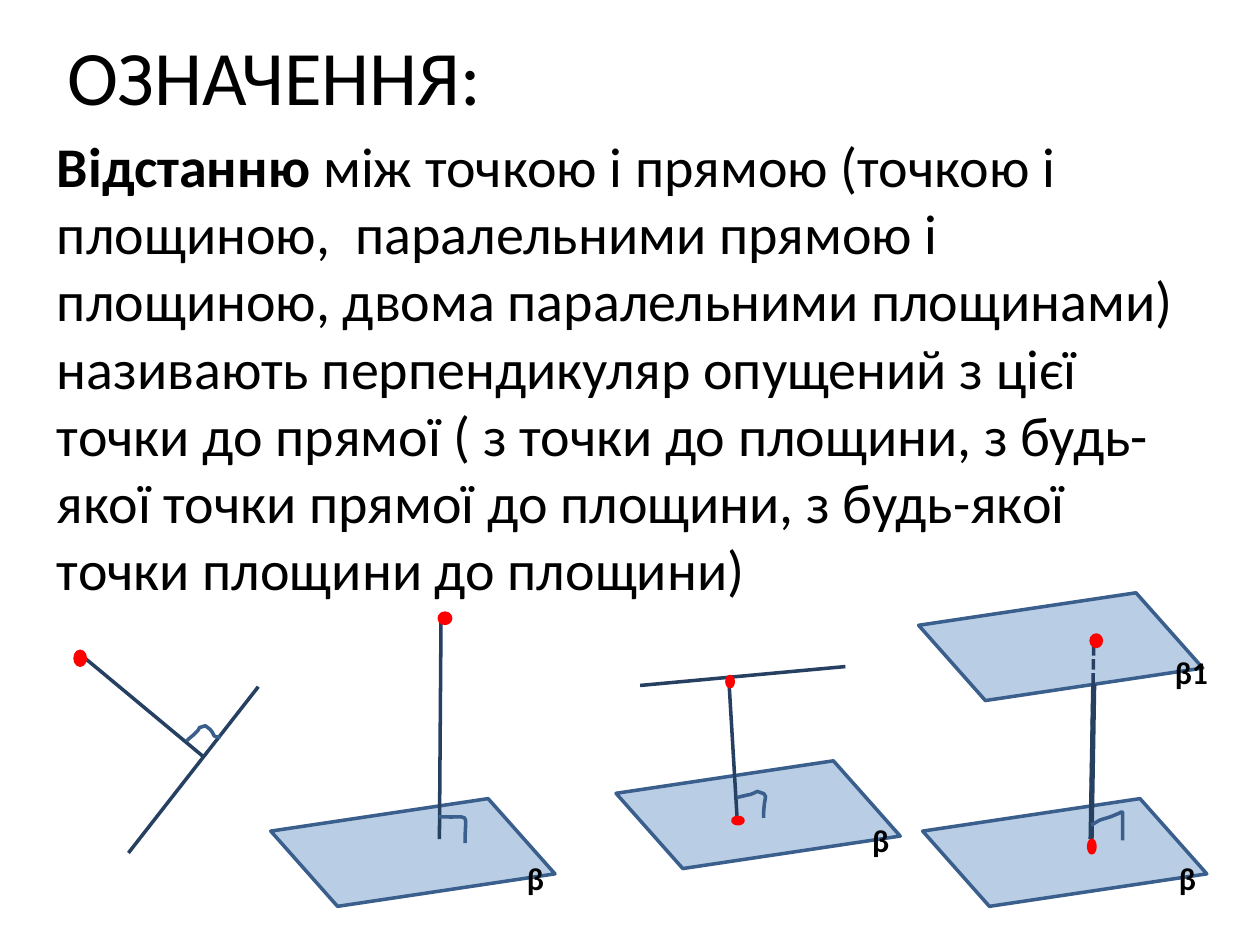
"""Build a slide defining distance in space, with four geometric sketches."""
from lxml import etree
from pptx import Presentation
from pptx.dml.color import RGBColor
from pptx.enum.dml import MSO_LINE
from pptx.enum.shapes import MSO_CONNECTOR, MSO_SHAPE
from pptx.enum.text import MSO_ANCHOR, MSO_AUTO_SIZE, PP_ALIGN
from pptx.oxml.ns import qn
from pptx.util import Pt

STRAIGHT = MSO_CONNECTOR.STRAIGHT
OVAL, PARALLELOGRAM = MSO_SHAPE.OVAL, MSO_SHAPE.FLOWCHART_DATA
DASH = MSO_LINE.SQUARE_DOT
LEFT = PP_ALIGN.LEFT
TOP, MIDDLE = MSO_ANCHOR.TOP, MSO_ANCHOR.MIDDLE
NO_FIT, GROW = MSO_AUTO_SIZE.NONE, MSO_AUTO_SIZE.SHAPE_TO_FIT_TEXT

THEME = {
    "font": "Calibri", "title": 44, "body": 32, "label": 18, "stroke": 2,
    "text": "000000", "plane": "B9CDE5", "edge": "3A5F8C",
    "line": "254061", "point": "FF0000",
}

TITLE = [("ОЗНАЧЕННЯ:", False)]
DEFINITION = [
    ("Відстанню", True),
    (" між точкою і прямою (точкою і площиною,  паралельними прямою і "
     "площиною, двома паралельними площинами) називають перпендикуляр "
     "опущений з цієї точки до прямої ( з точки до площини, з будь-якої "
     "точки прямої до площини, з будь-якої точки площини до площини)", False),
]

PLANE_SIZE, PLANE_TURN = (157, 48.2), 351.5
LABEL_OFFSET, LABEL_HEIGHT = (136.6, 24.2), 28
PLANES = [
    (157.4, 463.1, "β", 23),
    (354.7, 441.5, "β", 23),
    (527.6, 345.5, "β1", 34),
    (529.9, 463.1, "β", 23),
]
LINES = [
    ((252, 355), (251.1, 479.5), 2, None),
    ((147.6, 392.4), (73.4, 487.4), 2, None),
    ((116.6, 432.7), (48.2, 375.8), 2, None),
    ((483.1, 380.9), (365.8, 391.7), 2, None),
    ((416.4, 386.6), (421.4, 470.9), 2, None),
    ((625, 391), (623.5, 479.5), 3, None),
    ((625, 368.6), (623.5, 457.2), 2, DASH),
]
POINTS = [
    (251, 350.4, 6.5, 5.8),
    (42.9, 372.2, 5.8, 7.9),
    (415.4, 386.6, 3.6, 5.8),
    (623.5, 362.9, 5.8, 6.5),
    (622.1, 480.2, 3.6, 7.2),
    (418.8, 467.1, 5.8, 3.6),
]
RIGHT_ANGLES = [
    [(106.6, 423.4),
     (108, 421.9), (110.2, 420.5), (111.6, 419),
     (116.6, 414), (110.9, 416.9), (117.4, 414.7),
     (118.1, 415.4), (119.5, 416.2), (120.2, 416.9),
     (121, 417.6), (121.7, 419), (122.4, 420.5),
     (123.1, 421.2), (126, 421.2), (126, 421.2)],
    [(250.6, 466.6), (270, 468), (265.7, 462.2), (265.7, 481.7)],
    [(421.2, 455.8),
     (423.4, 455), (424.8, 455), (427, 454.3),
     (429.1, 454.3), (432.7, 452.2), (432.7, 452.2),
     (440.6, 455), (436.3, 452.2), (436.3, 467.3)],
    [(623.5, 471.6),
     (630.7, 467.3), (626.4, 469.4), (635, 466.6),
     (635, 466.6), (638.6, 465.1), (638.6, 465.1),
     (639.4, 465.1), (641.5, 463), (641.5, 464.4),
     (641.5, 464.4), (641.5, 480.2), (641.5, 480.2)],
]


def color(name):
    return RGBColor.from_string(THEME[name])


def place(box, left, top, width, height):
    box.left, box.top, box.width, box.height = map(Pt, (left, top, width, height))


def write(box, spans, *, size, anchor=TOP, wrap=True, fit=NO_FIT):
    frame = box.text_frame
    frame.word_wrap, frame.auto_size, frame.vertical_anchor = wrap, fit, anchor
    para = frame.paragraphs[0]
    para.alignment = LEFT
    for text, bold in spans:
        span = para.add_run()
        span.text = text
        span.font.name, span.font.size = THEME["font"], Pt(THEME[size])
        span.font.bold = bold
        span.font.color.rgb = color("text")


def outline(line, name, width=THEME["stroke"]):
    line.color.rgb = color(name)
    line.width = Pt(width)


def add_filled(page, kind, bounds, fill, edge):
    shape = page.shapes.add_shape(kind, *map(Pt, bounds))
    shape.shadow.inherit = False
    shape.fill.solid()
    shape.fill.fore_color.rgb = color(fill)
    outline(shape.line, edge)
    return shape


def add_plane(page, left, top, label, label_width):
    plane = add_filled(page, PARALLELOGRAM, (left, top, *PLANE_SIZE), "plane", "edge")
    plane.rotation = PLANE_TURN
    plane._element.spPr.find(qn("a:xfrm")).set("flipV", "1")
    across, down = LABEL_OFFSET
    box = page.shapes.add_textbox(
        Pt(left + across), Pt(top + down), Pt(label_width), Pt(LABEL_HEIGHT))
    write(box, [(label, True)], size="label", wrap=False, fit=GROW)


def add_line(page, start, end, width, dash):
    line = page.shapes.add_connector(STRAIGHT, *map(Pt, start + end))
    outline(line.line, "line", width)
    if dash:
        line.line.dash_style = dash
    etree.SubElement(line._element.spPr, qn("a:effectLst"))


def add_right_angle(page, controls):
    knots = [tuple(map(Pt, knot)) for knot in controls[::3]]
    builder = page.shapes.build_freeform(*knots[0])
    builder.add_line_segments(knots[1:], close=False)
    mark = builder.convert_to_shape()
    mark.shadow.inherit = False
    mark.fill.background()
    outline(mark.line, "edge")
    segments = list(mark._element.spPr.iter(qn("a:lnTo")))
    for index, segment in enumerate(segments):
        curve = etree.Element(qn("a:cubicBezTo"))
        for x, y in controls[3 * index + 1:3 * index + 4]:
            etree.SubElement(curve, qn("a:pt"),
                             x=str(Pt(x) - mark.left), y=str(Pt(y) - mark.top))
        segment.getparent().replace(segment, curve)


def main():
    deck = Presentation()
    deck.slide_width, deck.slide_height = Pt(720), Pt(540)
    page = deck.slides.add_slide(deck.slide_layouts[5])
    title = page.shapes.title
    place(title, 31.3, -2.2, 648, 90)
    write(title, TITLE, size="title", anchor=MIDDLE)
    body = page.shapes.add_textbox(Pt(25.5), Pt(71.6), Pt(669.6), Pt(278))
    write(body, DEFINITION, size="body")
    for plane in PLANES:
        add_plane(page, *plane)
    for line in LINES:
        add_line(page, *line)
    for bounds in POINTS:
        add_filled(page, OVAL, bounds, "point", "point")
    for controls in RIGHT_ANGLES:
        add_right_angle(page, controls)
    deck.save("out.pptx")


if __name__ == "__main__":
    main()
